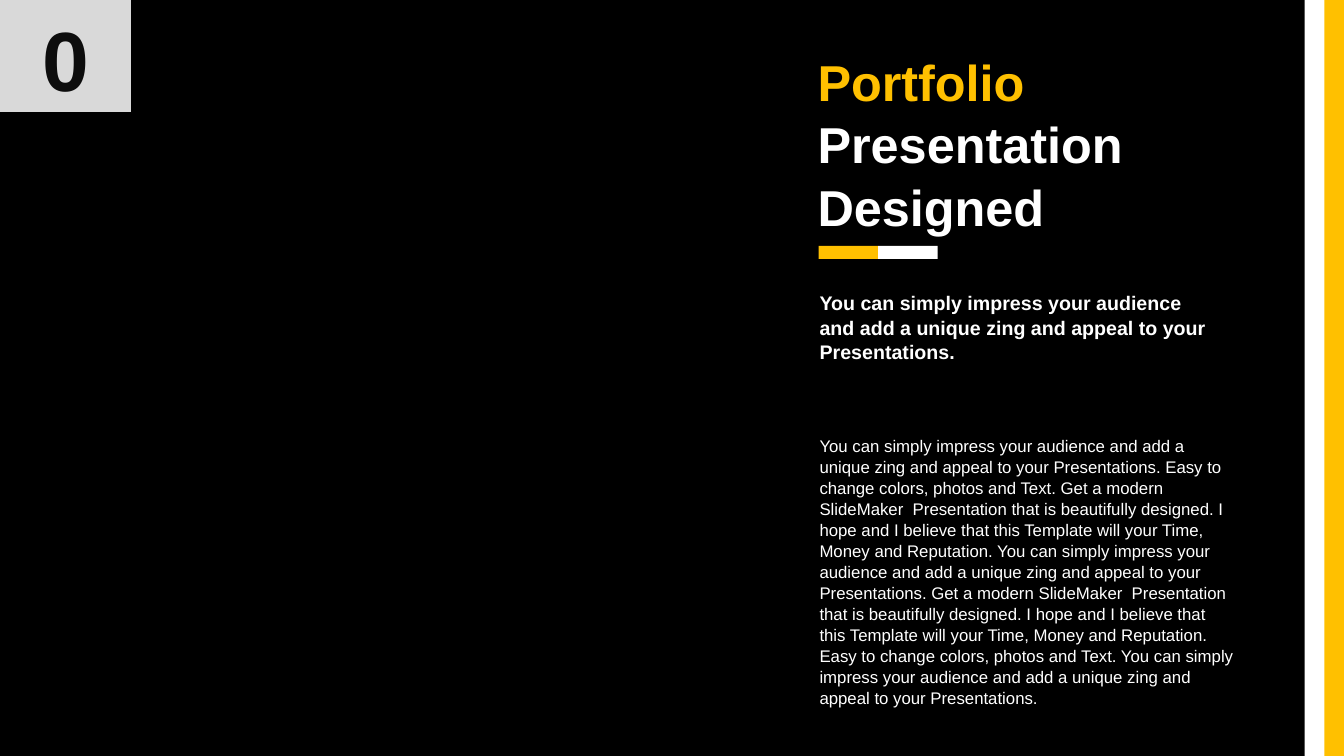
"""Build the portfolio slide with its title, texts and accent bars."""
from pptx import Presentation
from pptx.dml.color import RGBColor
from pptx.enum.shapes import MSO_SHAPE
from pptx.enum.text import MSO_ANCHOR, PP_ALIGN
from pptx.util import Inches, Pt

YELLOW, WHITE, BLACK = "FFC000", "FFFFFF", "000000"
GREY, INK = "D9D9D9", "0D0D0D"
WIDTH, HEIGHT = 13.33, 7.5
EDGE, ACCENT = 0.39, 0.59
LINE_SPACING = 1.04

LEAD = "You can simply impress your audience and add a unique zing and appeal to your Presentations."
TEMPLATE = (
    "Get a modern SlideMaker  Presentation that is beautifully designed. "
    "I hope and I believe that this Template will your Time, Money and Reputation."
)
EASY = "Easy to change colors, photos and Text."
BODY = " ".join([LEAD, EASY, TEMPLATE, LEAD, TEMPLATE, EASY, LEAD])

BARS = [
    ((WIDTH - EDGE, 0, EDGE, HEIGHT), WHITE),
    ((WIDTH - EDGE / 2, 0, EDGE / 2, HEIGHT), YELLOW),
    ((8.12, 2.44, ACCENT, 0.13), YELLOW),
    ((8.12 + ACCENT, 2.44, ACCENT, 0.13), WHITE),
]
TEXTS = [
    ((8.03, 4.27, 4.33, 2.73), [(BODY, WHITE)], {"size": Pt(12), "bold": False}),
    ((8.01, 0.43, 4.09, 1.92),
     [("Portfolio", YELLOW), ("Presentation Designed", WHITE)],
     {"size": Pt(36), "bold": True}),
    ((8.03, 2.83, 4.08, 0.81), [(LEAD, WHITE)], {"size": Pt(14), "bold": True}),
]
NUMBER = ((0, 0, 1.3, 1.11), [("0", INK)], {"size": Pt(60), "bold": True})


def color(value):
    return RGBColor.from_string(value)


def add_bar(slide, box, fill):
    shape = slide.shapes.add_shape(MSO_SHAPE.RECTANGLE, *map(Inches, box))
    shape.shadow.inherit = False
    shape.fill.solid()
    shape.fill.fore_color.rgb = color(fill)
    shape.line.fill.background()
    return shape


def write(shape, lines, font_format, alignment=PP_ALIGN.LEFT):
    frame = shape.text_frame
    frame.word_wrap = True
    for index, (text, text_color) in enumerate(lines):
        paragraph = frame.add_paragraph() if index else frame.paragraphs[0]
        paragraph.alignment = alignment
        paragraph.line_spacing = LINE_SPACING
        run = paragraph.add_run()
        run.text = text
        run.font.name = "Arial"
        run.font.color.rgb = color(text_color)
        for name, value in font_format.items():
            setattr(run.font, name, value)


def main():
    presentation = Presentation()
    presentation.slide_width = Inches(WIDTH)
    presentation.slide_height = Inches(HEIGHT)
    slide = presentation.slides.add_slide(presentation.slide_layouts[6])
    slide.background.fill.solid()
    slide.background.fill.fore_color.rgb = color(BLACK)

    for box, fill in BARS:
        add_bar(slide, box, fill)
    for box, lines, font_format in TEXTS:
        write(slide.shapes.add_textbox(*map(Inches, box)), lines, font_format)

    box, lines, font_format = NUMBER
    badge = add_bar(slide, box, GREY)
    badge.text_frame.vertical_anchor = MSO_ANCHOR.MIDDLE
    write(badge, lines, font_format, PP_ALIGN.CENTER)

    presentation.save("out.pptx")


if __name__ == "__main__":
    main()
